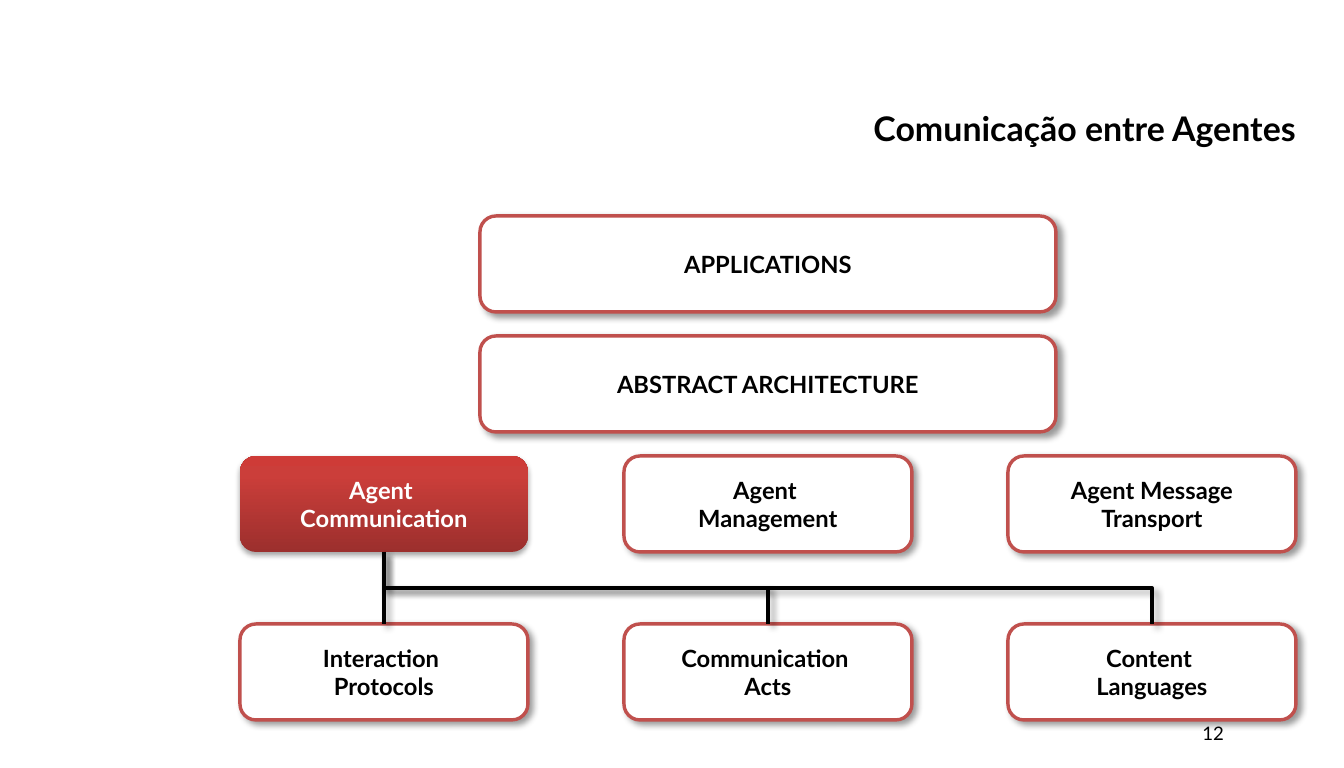
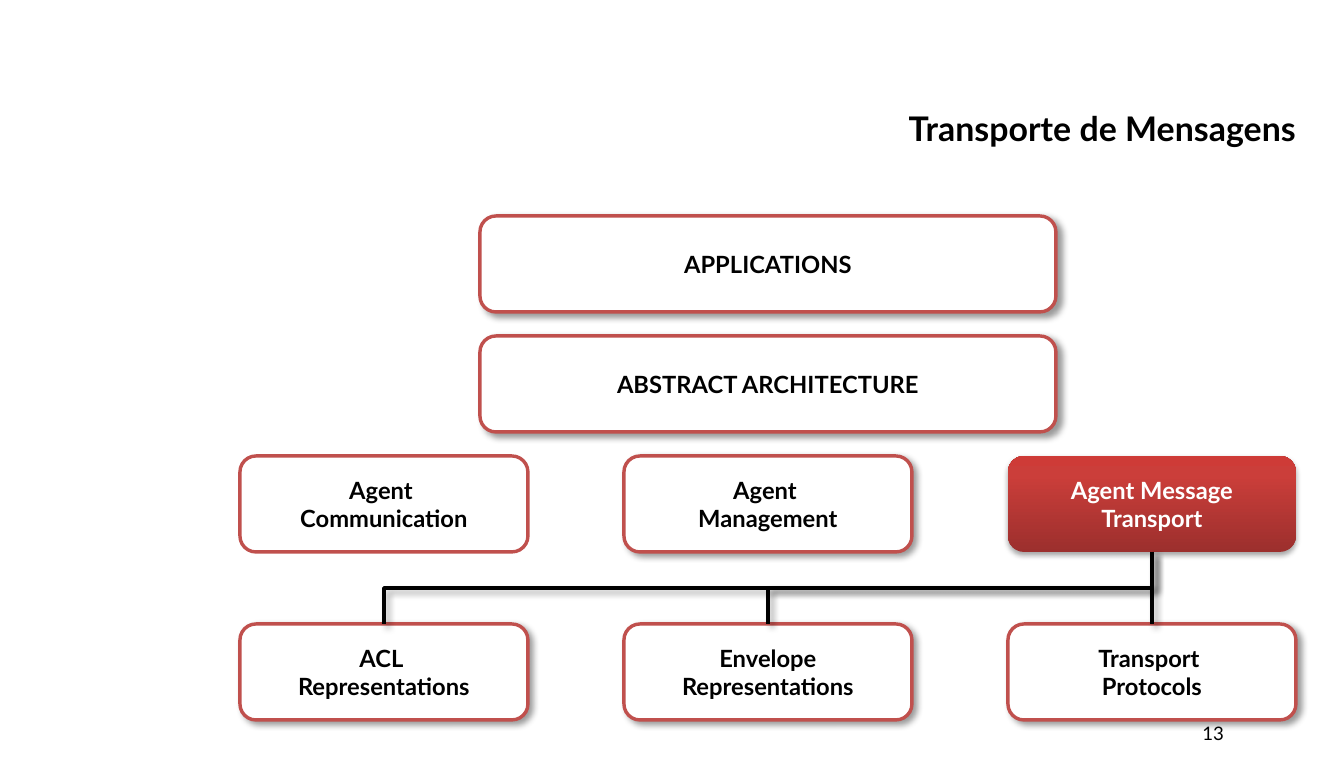
from pptx import Presentation
from pptx.dml.color import RGBColor
from pptx.enum import shapes, text
from pptx.oxml import parse_xml
from pptx.util import Cm, Pt

BLACK = RGBColor(0x00, 0x00, 0x00)
WHITE = RGBColor(0xFF, 0xFF, 0xFF)
RED = RGBColor(0xC0, 0x50, 0x4D)
ACTIVE_STOPS = [
    (0, RGBColor(0x9C, 0x2F, 0x2D)),
    (80, RGBColor(0xCB, 0x3E, 0x3A)),
    (100, RGBColor(0xCE, 0x3B, 0x37)),
]
FONT = "Lato"
DRAWING_NS = 'xmlns:a="http://schemas.openxmlformats.org/drawingml/2006/main"'
TOP_SITE, BOTTOM_SITE = 0, 2

# Grid, in centimetres
COLUMNS = [5 + 8 * i for i in range(3)]
BOX_WIDTH, BOX_HEIGHT = 6, 2
WIDE_LEFT, WIDE_WIDTH = 10, 12
SERVICE_TOP, DETAIL_TOP = 9.5, 13

LAYERS = [("APPLICATIONS", 4.5), ("ABSTRACT ARCHITECTURE", 7)]
SERVICES = ["Agent \nCommunication", "Agent \nManagement", "Agent Message\nTransport"]

# active: column of the highlighted service; unfilled: columns drawn as outline only
PAGES = [
    dict(number="12", title="Comunicação entre Agentes", active=0, unfilled=[],
         details=["Interaction \nProtocols", "Communication \nActs", "Content \nLanguages"]),
    dict(number="13", title="Transporte de Mensagens", active=2, unfilled=[0],
         details=["ACL \nRepresentations", "Envelope\nRepresentations", "Transport \nProtocols"]),
]

SOFT_SHADOW = dict(alpha=40, blur=4, distance=3, angle=45)
ACTIVE_SHADOW = dict(alpha=35, blur=3.15, distance=1.8, angle=90)


def write(shape, words, size, color, bold, align, anchor, inset=None):
    frame = shape.text_frame
    frame.word_wrap = True
    frame.vertical_anchor = anchor
    if inset is not None:
        for side in ("left", "right", "top", "bottom"):
            setattr(frame, f"margin_{side}", Cm(inset))
    paragraph = frame.paragraphs[0]
    paragraph.text = words
    paragraph.alignment = align
    for run in paragraph.runs:
        run.font.color.rgb = color
        for name, value in dict(name=FONT, size=Pt(size), bold=bold).items():
            setattr(run.font, name, value)


def add_shadow(item, alpha, blur, distance, angle):
    """Append an outer shadow; call it once the fill and line are set."""
    item.element.spPr.append(parse_xml(
        f'<a:effectLst {DRAWING_NS}><a:outerShdw blurRad="{Pt(blur)}" dist="{Pt(distance)}"'
        f' dir="{angle * 60000}" rotWithShape="0"><a:srgbClr val="{BLACK}">'
        f'<a:alpha val="{alpha * 1000}"/></a:srgbClr></a:outerShdw></a:effectLst>'))


prs = Presentation()
prs.slide_width, prs.slide_height = Cm(28), Cm(16)

for page in PAGES:
    slide = prs.slides.add_slide(prs.slide_layouts[6])

    page_number = slide.shapes.add_textbox(Cm(21.46), Cm(14.83), Cm(4.27), Cm(0.9))
    write(page_number, page["number"], 11, BLACK, False,
          text.PP_ALIGN.RIGHT, text.MSO_ANCHOR.BOTTOM, 0.23)
    title = slide.shapes.add_textbox(Cm(4), Cm(2.25), Cm(23), Cm(2))
    write(title, page["title"], 20, BLACK, True,
          text.PP_ALIGN.RIGHT, text.MSO_ANCHOR.TOP, 0)

    # Each entry: words, left, top, width, style
    entries = [(words, WIDE_LEFT, top, WIDE_WIDTH, "plain") for words, top in LAYERS]
    for column, left in enumerate(COLUMNS):
        style = ("active" if column == page["active"]
                 else "unfilled" if column in page["unfilled"] else "plain")
        entries.append((SERVICES[column], left, SERVICE_TOP, BOX_WIDTH, style))
        entries.append((page["details"][column], left, DETAIL_TOP, BOX_WIDTH, "plain"))

    details = []
    for words, left, top, width, style in entries:
        box = slide.shapes.add_shape(shapes.MSO_SHAPE.ROUNDED_RECTANGLE,
                                     Cm(left), Cm(top), Cm(width), Cm(BOX_HEIGHT))
        if style == "active":
            active_service = box
            stops = "".join(f'<a:gs pos="{pos * 1000}"><a:srgbClr val="{color}"/></a:gs>'
                            for pos, color in ACTIVE_STOPS)
            box.element.spPr.prstGeom.addnext(parse_xml(
                f'<a:gradFill {DRAWING_NS} rotWithShape="1"><a:gsLst>{stops}</a:gsLst>'
                f'<a:lin ang="16200000" scaled="0"/></a:gradFill>'))
            box.line.fill.background()
            add_shadow(box, **ACTIVE_SHADOW)
        else:
            box.line.color.rgb = RED
            box.line.width = Pt(2)
            if style == "plain":
                box.fill.solid()
                box.fill.fore_color.rgb = WHITE
                add_shadow(box, **SOFT_SHADOW)
            else:
                box.fill.background()
                box.shadow.inherit = False
        write(box, words, 14, WHITE if style == "active" else BLACK, True,
              text.PP_ALIGN.CENTER, text.MSO_ANCHOR.MIDDLE)
        if top == DETAIL_TOP:
            details.append(box)

    start_x = COLUMNS[page["active"]] + BOX_WIDTH / 2
    start_y = SERVICE_TOP + BOX_HEIGHT
    drop = DETAIL_TOP - start_y
    for left, detail in zip(COLUMNS, details):
        end_x = left + BOX_WIDTH / 2
        span = abs(end_x - start_x)
        kind = shapes.MSO_CONNECTOR.ELBOW if span else shapes.MSO_CONNECTOR.STRAIGHT
        branch = slide.shapes.add_connector(kind, Cm(start_x), Cm(start_y),
                                            Cm(end_x), Cm(DETAIL_TOP))
        branch.begin_connect(active_service, BOTTOM_SITE)
        branch.end_connect(detail, TOP_SITE)
        if span:
            # A quarter turn makes the elbow leave downwards
            to_right = end_x > start_x
            branch.left = Cm((start_x + end_x - drop) / 2)
            branch.top = Cm((start_y + DETAIL_TOP - span) / 2)
            branch.width, branch.height = Cm(drop), Cm(span)
            turn = dict(rot=270.0 if to_right else 90.0, flipH=to_right, flipV=False)
            for name, value in turn.items():
                setattr(branch.element.spPr.xfrm, name, value)
        branch.line.color.rgb = BLACK
        branch.line.width = Pt(2)
        add_shadow(branch, **SOFT_SHADOW)

prs.save("out.pptx")
